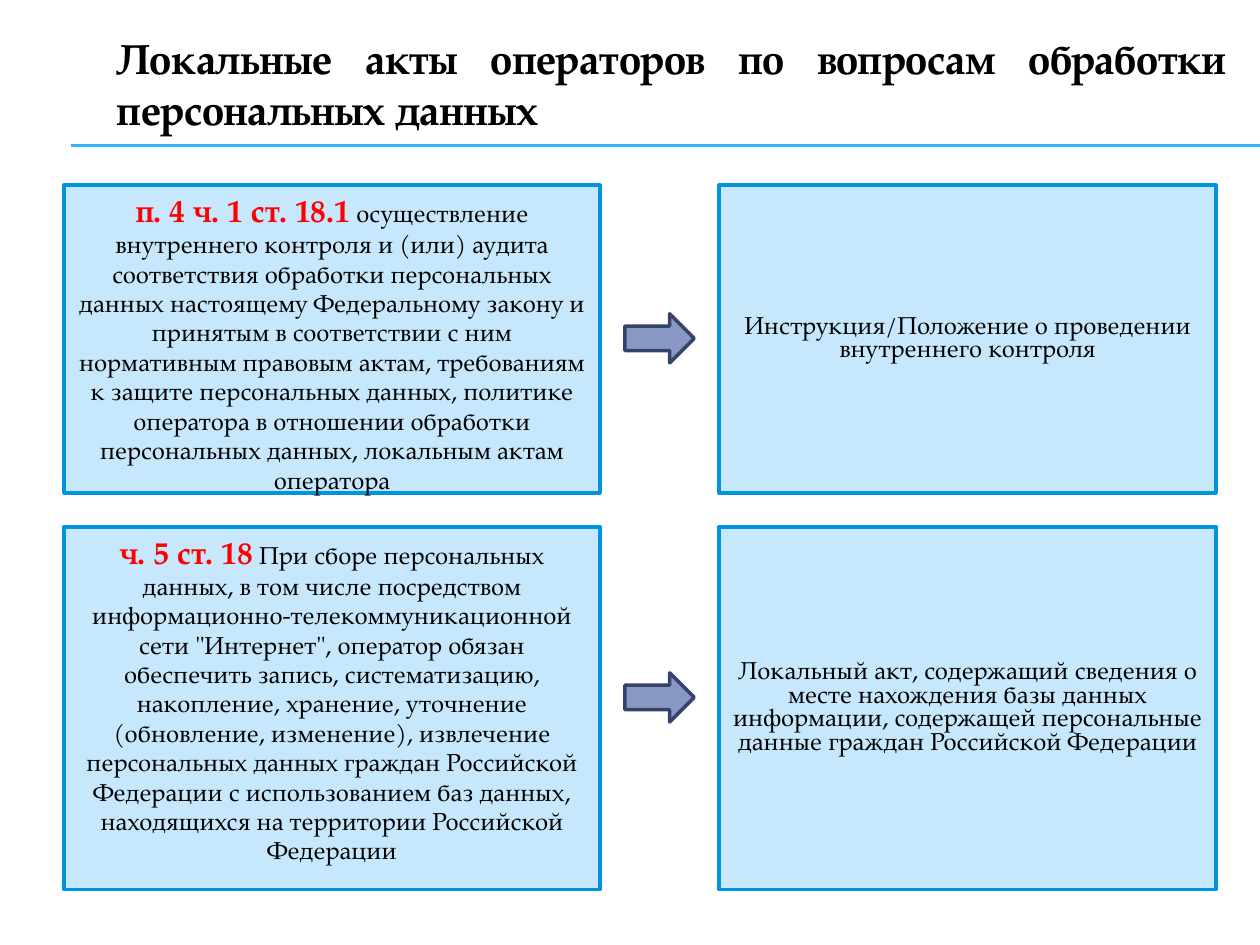
from lxml import etree
from pptx import Presentation
from pptx.dml.color import RGBColor
from pptx.enum.shapes import MSO_CONNECTOR, MSO_SHAPE
from pptx.enum.text import MSO_ANCHOR, PP_ALIGN
from pptx.oxml.ns import qn
from pptx.util import Inches, Pt

RECTANGLE, ARROW = MSO_SHAPE.RECTANGLE, MSO_SHAPE.RIGHT_ARROW
STRAIGHT = MSO_CONNECTOR.STRAIGHT
TOP, MIDDLE = MSO_ANCHOR.TOP, MSO_ANCHOR.MIDDLE
CENTER, JUSTIFY = PP_ALIGN.CENTER, PP_ALIGN.JUSTIFY

FONT = "TeX Gyre Pagella"
TITLE = "Локальные акты операторов по вопросам обработки персональных данных"
ROWS = [
    {
        "top": 1.47, "height": 2.44, "arrow_top": 2.49,
        "article": "п. 4 ч. 1 ст. 18.1",
        "duty": " осуществление внутреннего контроля и (или) аудита соответствия "
                "обработки персональных данных настоящему Федеральному закону и "
                "принятым в соответствии с ним нормативным правовым актам, требованиям "
                "к защите персональных данных, политике оператора в отношении обработки "
                "персональных данных, локальным актам оператора",
        "act": "Инструкция/Положение о проведении внутреннего контроля",
    },
    {
        "top": 4.18, "height": 2.88, "arrow_top": 5.34,
        "article": "ч. 5 ст. 18",
        "duty": " При сборе персональных данных, в том числе посредством "
                "информационно-телекоммуникационной сети \"Интернет\", оператор обязан "
                "обеспечить запись, систематизацию, накопление, хранение, уточнение "
                "(обновление, изменение), извлечение персональных данных граждан "
                "Российской Федерации с использованием баз данных, находящихся на "
                "территории Российской Федерации",
        "act": "Локальный акт, содержащий сведения о месте нахождения базы данных "
               "информации, содержащей персональные данные граждан Российской Федерации",
    },
]
DUTY_COLUMN, ARROW_COLUMN, ACT_COLUMN = (0.51, 4.25), (4.96, 0.55), (5.71, 3.94)
ARROW_HEIGHT = 0.39
RULE_LEFT, RULE_TOPS = 0.56, (1.15, 1.16)


def color(value):
    return RGBColor.from_string(value)


def write(frame, runs, align=CENTER, anchor=MIDDLE, spacing=None):
    frame.word_wrap = True
    frame.vertical_anchor = anchor
    paragraph = frame.paragraphs[0]
    paragraph.alignment = align
    paragraph.line_spacing = spacing
    for text, size, hue, bold in runs:
        run = paragraph.add_run()
        run.text = text
        run.font.name = FONT
        run.font.size = Pt(size)
        run.font.bold = bold
        run.font.color.rgb = color(hue)


def add_block(slide, kind, column, top, height, fill, line, width):
    left, breadth = column
    block = slide.shapes.add_shape(
        kind, Inches(left), Inches(top), Inches(breadth), Inches(height))
    block.shadow.inherit = False
    block.fill.solid()
    block.fill.fore_color.rgb = color(fill)
    block.line.color.rgb = color(line)
    block.line.width = Pt(width)
    return block


def add_rule(slide, top, right):
    rule = slide.shapes.add_connector(
        STRAIGHT, Inches(RULE_LEFT), Inches(top), right, Inches(top))
    rule.line.color.rgb = color("31B6FD")
    rule.line.width = Pt(0.75)
    etree.SubElement(rule.element.spPr, qn("a:effectLst"))


def main():
    deck = Presentation()
    deck.slide_width, deck.slide_height = Inches(10), Inches(7.5)
    slide = deck.slides.add_slide(deck.slide_layouts[6])

    for top in RULE_TOPS:
        add_rule(slide, top, deck.slide_width)
    title = slide.shapes.add_textbox(Inches(0.83), Inches(0.21), Inches(9), Inches(0.9))
    write(title.text_frame, [(TITLE, 24, "000000", True)], align=JUSTIFY)

    for row in ROWS:
        duty, act = (
            add_block(slide, RECTANGLE, column, row["top"], row["height"],
                      "C6E7FC", "0293E0", 2.25)
            for column in (DUTY_COLUMN, ACT_COLUMN))
        write(duty.text_frame,
              [(row["article"], 18, "FF0000", True), (row["duty"], 14, "000000", False)],
              anchor=TOP)
        write(act.text_frame, [(row["act"], 14, "000000", False)], spacing=0.8)
        add_block(slide, ARROW, ARROW_COLUMN, row["arrow_top"], ARROW_HEIGHT,
                  "8898C3", "35436A", 2)

    deck.save("out.pptx")


if __name__ == "__main__":
    main()
